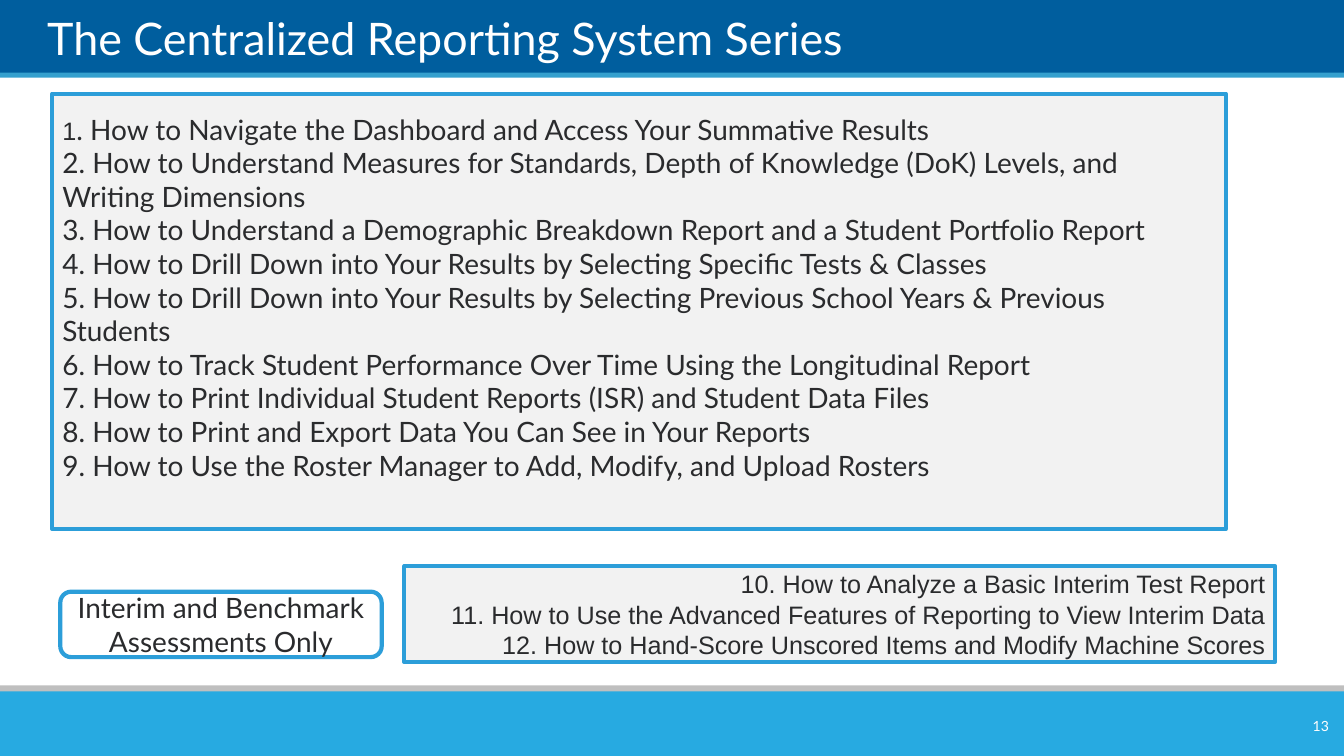
from pptx import Presentation
from pptx.dml.color import RGBColor
from pptx.enum.shapes import MSO_SHAPE
from pptx.enum.text import MSO_ANCHOR, PP_ALIGN
from pptx.util import Cm, Pt

RECTANGLE, ROUNDED = MSO_SHAPE.RECTANGLE, MSO_SHAPE.ROUNDED_RECTANGLE
LEFT, CENTER, RIGHT = PP_ALIGN.LEFT, PP_ALIGN.CENTER, PP_ALIGN.RIGHT
MIDDLE, BOTTOM = MSO_ANCHOR.MIDDLE, MSO_ANCHOR.BOTTOM

COLORS = {
    "header": "005E9E", "header_edge": "35A0CE", "footer_edge": "BFBFBF",
    "footer": "27AAE1", "panel": "F2F2F2", "border": "2C9ED9",
    "text": "2A2B2D", "white": "FFFFFF",
}
TITLE = "The Centralized Reporting System Series"
PAGE_NUMBER = "13"
MAIN_TOPICS = [
    "How to Navigate the Dashboard and Access Your Summative Results",
    "How to Understand Measures for Standards, Depth of Knowledge (DoK) Levels, and Writing Dimensions",
    "How to Understand a Demographic Breakdown Report and a Student Portfolio Report",
    "How to Drill Down into Your Results by Selecting Specific Tests & Classes",
    "How to Drill Down into Your Results by Selecting Previous School Years & Previous Students",
    "How to Track Student Performance Over Time Using the Longitudinal Report",
    "How to Print Individual Student Reports (ISR) and Student Data Files",
    "How to Print and Export Data You Can See in Your Reports",
    "How to Use the Roster Manager to Add, Modify, and Upload Rosters",
]
INTERIM_TOPICS = [
    "How to Analyze a Basic Interim Test Report",
    "How to Use the Advanced Features of Reporting to View Interim Data",
    "How to Hand-Score Unscored Items and Modify Machine Scores",
]
INTERIM_LABEL = "Interim and Benchmark Assessments Only"
SLIDE_WIDTH, SLIDE_HEIGHT = 33.87, 19.05
BANDS = [
    ("header", 0, 1.88),
    ("header_edge", 1.83, 0.13),
    ("footer_edge", 17.27, 0.36),
    ("footer", 17.42, 1.63),
]


def rgb(name):
    """Return the named color."""
    return RGBColor.from_string(COLORS[name])


def add_box(slide, kind, bounds, fill=None, border=None):
    """Add a flat shape with an optional fill and border."""
    shape = slide.shapes.add_shape(kind, *map(Cm, bounds))
    shape.shadow.inherit = False
    if fill:
        shape.fill.solid()
        shape.fill.fore_color.rgb = rgb(fill)
    else:
        shape.fill.background()
    if border:
        shape.line.color.rgb = rgb(border)
        shape.line.width = Pt(3)
    else:
        shape.line.fill.background()
    return shape


def write(shape, lines, color="text", align=LEFT, anchor=MIDDLE):
    """Write lines made of (text, font, size) runs."""
    frame = shape.text_frame
    frame.word_wrap = True
    frame.vertical_anchor = anchor
    for index, runs in enumerate(lines):
        paragraph = frame.add_paragraph() if index else frame.paragraphs[0]
        paragraph.alignment = align
        for text, font, size in runs:
            run = paragraph.add_run()
            run.text = text
            run.font.name = font
            run.font.size = Pt(size)
            run.font.color.rgb = rgb(color)
    return frame


def main():
    """Build and save the series overview slide."""
    presentation = Presentation()
    presentation.slide_width = Cm(SLIDE_WIDTH)
    presentation.slide_height = Cm(SLIDE_HEIGHT)
    slide = presentation.slides.add_slide(presentation.slide_layouts[6])

    for color, top, height in BANDS:
        add_box(slide, RECTANGLE, (0, top, SLIDE_WIDTH, height), color)

    number_box = slide.shapes.add_textbox(Cm(31.78), Cm(17.91), Cm(1.96), Cm(0.76))
    write(number_box, [[(PAGE_NUMBER, "Lato", 10)]], "white", RIGHT)

    title_box = slide.shapes.add_textbox(Cm(1.19), Cm(0.18), Cm(31.57), Cm(1.45))
    title_frame = write(title_box, [[(TITLE, "Lato", 32)]], "white", anchor=BOTTOM)
    title_frame.margin_left = title_frame.margin_right = 0
    title_frame.margin_top = title_frame.margin_bottom = 0

    interim_panel = add_box(slide, RECTANGLE, (10.19, 14.27, 21.95, 2.41), "panel", "border")
    first_interim = len(MAIN_TOPICS) + 1
    interim_lines = [
        [(f"{number}. {topic}", "Arial", 18)]
        for number, topic in enumerate(INTERIM_TOPICS, first_interim)
    ]
    write(interim_panel, interim_lines, align=RIGHT)

    main_panel = add_box(slide, RECTANGLE, (1.32, 2.36, 29.57, 10.97), "panel", "border")
    main_lines = [
        [(f"{number}. {topic}", "Lato", 20)]
        for number, topic in enumerate(MAIN_TOPICS, 1)
    ]
    main_lines[0] = [("1", "Arial", 18), (f". {MAIN_TOPICS[0]}", "Lato", 20)]
    write(main_panel, main_lines).margin_bottom = Cm(0.85)

    label = add_box(slide, ROUNDED, (1.52, 14.91, 8.1, 1.65), border="border")
    write(label, [[(INTERIM_LABEL, "Lato", 20)]], align=CENTER)

    presentation.save("out.pptx")


if __name__ == "__main__":
    main()
